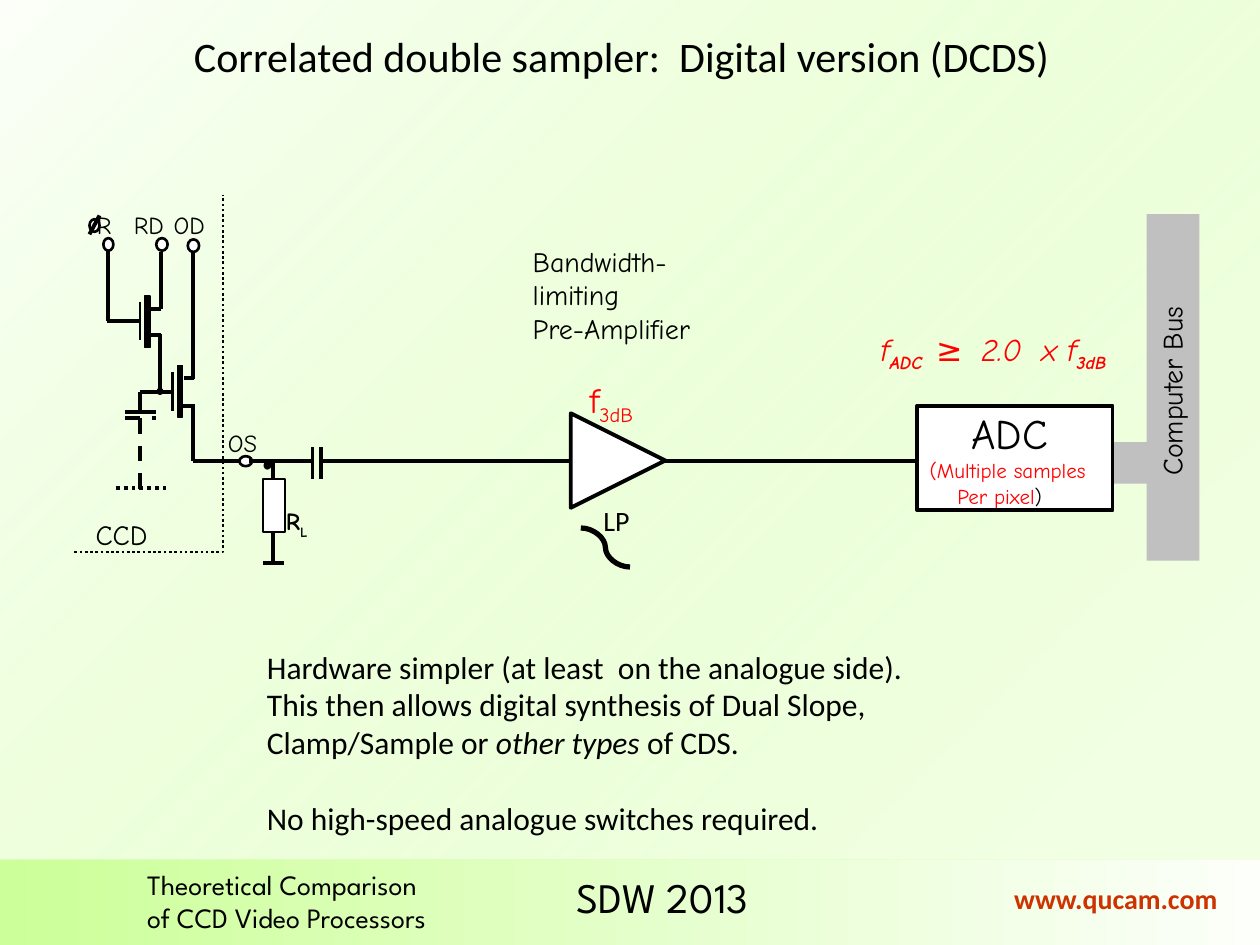
from dataclasses import dataclass

from lxml.etree import SubElement
from pptx import Presentation
from pptx.dml.color import RGBColor
from pptx.enum.dml import MSO_LINE
from pptx.enum.shapes import MSO_CONNECTOR, MSO_SHAPE
from pptx.enum.text import MSO_ANCHOR, MSO_AUTO_SIZE, PP_ALIGN
from pptx.oxml.ns import qn
from pptx.util import Inches, Pt


@dataclass(frozen=True)
class Theme:
    black: str = "000000"
    white: str = "FFFFFF"
    gray: str = "C0C0C0"
    red: str = "FF0000"
    link: str = "CC3300"
    green: str = "CCFF99"
    pale: str = "FCFFFA"
    plain: str = "Calibri"
    comic: str = "Comic Neue"
    footer: str = "League Spartan"
    title: int = 24
    large: int = 20
    body: int = 18
    label: int = 16
    pin: int = 14
    note: int = 12
    junction: int = 60


theme = Theme()


def add_shape(shapes, kind, box, fill=theme.white, weight=0, rotation=0):
    """Add a preset shape; a weight of zero means no outline."""
    shape = shapes.add_shape(kind, *map(Inches, box))
    shape.shadow.inherit = False
    shape.rotation = rotation
    shape.fill.solid()
    shape.fill.fore_color.rgb = RGBColor.from_string(fill)
    if weight:
        shape.line.color.rgb = RGBColor.from_string(theme.black)
        shape.line.width = Pt(weight)
    else:
        shape.line.fill.background()
    return shape


def add_text(shapes, box, paragraphs, shape=None, font=theme.comic, size=theme.label,
             color=theme.black, bold=False, anchor=MSO_ANCHOR.TOP,
             align=PP_ALIGN.LEFT, wrap=False, rotation=0):
    """Write paragraphs of (text, overrides) runs in a new box or a given shape."""
    if shape is None:
        shape = shapes.add_textbox(*map(Inches, box))
        shape.rotation = rotation
        shape.text_frame.auto_size = MSO_AUTO_SIZE.SHAPE_TO_FIT_TEXT
    frame = shape.text_frame
    frame.word_wrap = wrap
    frame.vertical_anchor = anchor
    for index, runs in enumerate(paragraphs):
        paragraph = frame.add_paragraph() if index else frame.paragraphs[0]
        paragraph.alignment = align
        for text, overrides in [(runs, {})] if isinstance(runs, str) else runs:
            run = paragraph.add_run()
            run.text = text
            run.font.name = font
            run.font.size = Pt(overrides.get("size", size))
            run.font.bold = overrides.get("bold", bold)
            run.font.italic = overrides.get("italic", False)
            run.font.color.rgb = RGBColor.from_string(overrides.get("color", color))
            if overrides.get("subscript"):
                run._r.get_or_add_rPr().set("baseline", "-25000")
    return shape


presentation = Presentation()
presentation.slide_width = Inches(10)
presentation.slide_height = Inches(7.5)
slide = presentation.slides.add_slide(presentation.slide_layouts[6])
shapes = slide.shapes

# Footer band and page background, both in green gradients
footer = add_shape(shapes, MSO_SHAPE.RECTANGLE, (0, 6.82, 10, 0.68))
page = add_shape(shapes, MSO_SHAPE.RECTANGLE, (0, 0, 10, 6.82))
for band, first_position in ((footer, 0), (page, 0.12)):
    band.fill.gradient()
    band.fill.gradient_angle = 0
    stops = band.fill.gradient_stops
    for stop, color, position in zip(stops, (theme.green, theme.pale), (first_position, 1)):
        stop.color.rgb = RGBColor.from_string(color)
        stop.position = position

# The page gradient is radial, mirrored and partly transparent
properties = page._element.spPr
properties.find(qn("a:xfrm")).set("flipH", "1")
gradient = properties.find(qn("a:gradFill"))
SubElement(next(gradient.iter(qn("a:srgbClr"))), qn("a:alpha"), val="27000")
gradient.remove(gradient.find(qn("a:lin")))
radial = SubElement(gradient, qn("a:path"))
radial.set("path", "circle")
SubElement(radial, qn("a:fillToRect"), l="100000", t="100000")

# Footer text
add_text(shapes, (4.48, 6.87, 1.78, 0.5), ["SDW 2013"], font=theme.footer, size=theme.title)
add_text(shapes, (1.07, 6.83, 2.9, 0.64), ["Theoretical Comparison", "of CCD Video Processors"],
         font=theme.footer, anchor=MSO_ANCHOR.MIDDLE)
add_text(shapes, (7.95, 6.95, 2.02, 0.37), ["www.qucam.com"], font=theme.plain,
         color=theme.link, bold=True)

# Wires: container, weight, dash, connector kind and end points
ccd = shapes.add_group_shape().shapes
straight = MSO_CONNECTOR.STRAIGHT
wires = [
    # Transistor gates
    (ccd, 1.5, None, straight, [(1.37, 2.95, 1.37, 3.26), (1.11, 2.4, 1.11, 2.7)]),
    # Reset transistor, output transistor and sense node
    (ccd, 2.25, None, straight, [
        (0.86, 1.99, 0.86, 2.55), (1.11, 2.55, 0.85, 2.55),
        (1.28, 2.45, 1.28, 2), (1.28, 2.45, 1.2, 2.45),
        (1.28, 2.66, 1.19, 2.66), (1.27, 2.65, 1.27, 3.11),
        (1.37, 3.11, 1.11, 3.11), (1.11, 3.26, 1.11, 3.11), (0.99, 3.27, 1.24, 3.27),
        (1.53, 3.01, 1.53, 1.99), (1.54, 3, 1.46, 3),
        (1.54, 3.22, 1.45, 3.22), (1.53, 3.21, 1.53, 3.66), (1.53, 3.66, 1.91, 3.66)]),
    # Parasitic capacitor and substrate
    (ccd, 2.25, MSO_LINE.DASH, straight, [(0.99, 3.32, 1.24, 3.32), (1.11, 3.32, 1.11, 3.88)]),
    (ccd, 2.25, MSO_LINE.ROUND_DOT, straight, [(0.92, 3.87, 1.32, 3.87)]),
    # Coupling capacitor, load and signal path
    (shapes, 2.25, None, straight, [
        (1.98, 3.66, 2.48, 3.66), (2.48, 3.55, 2.48, 3.8), (2.55, 3.55, 2.55, 3.8),
        (2.56, 3.66, 3.06, 3.66), (3.04, 3.66, 7.52, 3.66),
        (2.17, 3.66, 2.17, 4.47), (2.09, 4.47, 2.25, 4.47)]),
    # Low-pass symbol
    (shapes, 3, None, MSO_CONNECTOR.CURVE, [(4.61, 4.19, 5, 4.5)]),
]
for container, weight, dash, kind, segments in wires:
    for segment in segments:
        wire = container.add_connector(kind, *map(Inches, segment))
        wire.line.color.rgb = RGBColor.from_string(theme.black)
        wire.line.width = Pt(weight)
        if dash:
            wire.line.dash_style = dash
        SubElement(wire._element.spPr, qn("a:effectLst"))

# CCD transistor channels, node, terminals and the phase symbol
for left, top in ((1.41, 2.9), (1.15, 2.35)):
    add_shape(ccd, MSO_SHAPE.RECTANGLE, (left, top, 0.04, 0.41), theme.black, 0.75)
add_shape(ccd, MSO_SHAPE.OVAL, (1.25, 3.08, 0.04, 0.05), theme.black, 0.75)
for left, top, width, rotation in ((1.49, 1.9, 0.09, 0), (1.24, 1.89, 0.09, 0),
                                   (0.82, 1.89, 0.08, 0), (0.71, 1.74, 0.08, 0),
                                   (1.91, 3.61, 0.08, 90)):
    add_shape(ccd, MSO_SHAPE.OVAL, (left, top, width, 0.1), weight=1.5, rotation=rotation)
slash = ccd.add_connector(straight, *map(Inches, (0.79, 1.71, 0.71, 1.86)))
slash.line.color.rgb = RGBColor.from_string(theme.black)
slash.line.width = Pt(2.25)
SubElement(slash._element.spPr, qn("a:effectLst"))

# CCD pin names
for name, left, top, width, align in (("OD", 1.28, 1.62, 0.5, PP_ALIGN.LEFT),
                                      ("OS", 1.71, 3.35, 0.49, PP_ALIGN.LEFT),
                                      ("RD", 0.94, 1.62, 0.46, PP_ALIGN.RIGHT),
                                      ("R", 0.67, 1.62, 0.32, PP_ALIGN.LEFT)):
    add_text(ccd, (left, top, width, 0.33), [name], size=theme.pin,
             anchor=MSO_ANCHOR.MIDDLE, align=align)

# Dotted CCD boundary
builder = shapes.build_freeform(Inches(0.59), Inches(4.38))
builder.add_line_segments([(Inches(1.77), Inches(4.38)), (Inches(1.77), Inches(1.55))], close=False)
boundary = builder.convert_to_shape()
boundary.shadow.inherit = False
boundary.fill.background()
boundary.line.color.rgb = RGBColor.from_string(theme.black)
boundary.line.width = Pt(1.5)
boundary.line.dash_style = MSO_LINE.ROUND_DOT
add_text(shapes, (0.66, 4.06, 0.62, 0.37), ["CCD"])

# Load resistor, computer bus and amplifier
add_text(shapes, (1.97, 2.84, 0.41, 1.1), ["."], size=theme.junction)
add_shape(shapes, MSO_SHAPE.RECTANGLE, (2.09, 3.8, 0.17, 0.42), weight=1)
for box in ((9.1, 1.7, 0.42, 2.75), (8.78, 3.51, 0.33, 0.33)):
    add_shape(shapes, MSO_SHAPE.RECTANGLE, box, theme.gray)
add_shape(shapes, MSO_SHAPE.ISOSCELES_TRIANGLE, (4.53, 3.28, 0.75, 0.75), weight=2.25, rotation=90)
subscript = {"subscript": True}
red = {"size": theme.large, "color": theme.red}
amplifier = add_text(shapes, (4.13, 1.89, 1.63, 1.78),
                     ["Bandwidth-", "limiting", "Pre-Amplifier", [("f", red), ("3dB", red | subscript)]])
cutoff = amplifier.text_frame.paragraphs[-1]
cutoff.alignment = PP_ALIGN.CENTER
cutoff.space_before = Pt(19)
add_text(shapes, (8.49, 2.88, 1.62, 0.37), ["Computer Bus"], rotation=270)
add_text(shapes, (4.69, 3.95, 0.41, 0.37), ["LP"], font=theme.plain)
add_text(shapes, (2.17, 3.97, 0.4, 0.34), [[("R", {}), ("L", subscript)]], size=theme.pin, bold=True)

# Converter
converter = add_shape(shapes, MSO_SHAPE.RECTANGLE, (7.28, 3.22, 1.55, 0.83), weight=2.25)
add_text(shapes, None, [[("ADC", {"size": theme.title, "color": theme.black})], "(Multiple samples",
                        [("Per pixel", {}), (")", {"color": theme.black})]],
         shape=converter, size=theme.note, color=theme.red, anchor=MSO_ANCHOR.MIDDLE, wrap=True)
for paragraph, indent in zip(converter.text_frame.paragraphs, (0.33, 0, 0.22)):
    paragraph._p.get_or_add_pPr().set("marL", str(Inches(indent)))

# Sampling rule, spaced with tab stops
italic = {"italic": True}
small = italic | subscript | {"bold": True}
rule = add_text(shapes, (6.89, 2.57, 2.42, 0.64),
                [[("f", italic), ("ADC", small), ("\t≥\t2.0\tx f", italic), ("3dB", small)]],
                size=theme.body, color=theme.red, wrap=True)
tabs = SubElement(rule.text_frame.paragraphs[0]._p.get_or_add_pPr(), qn("a:tabLst"))
for position in (0.44, 0.8, 1.28):
    SubElement(tabs, qn("a:tab"), pos=str(Inches(position)), algn="l")

# Title and conclusions
add_text(shapes, (1.44, 0.19, 7.05, 0.5), ["Correlated double sampler:  Digital version (DCDS)"],
         font=theme.plain, size=theme.title)
conclusions = add_text(shapes, (2.02, 5.09, 5.31, 1.62), [
    "Hardware simpler (at least  on the analogue side).",
    "This then allows digital synthesis of Dual Slope,",
    [("Clamp/Sample or ", {}), ("other types ", italic), ("of CDS.", {})],
    "No high-speed analogue switches required."], font=theme.plain, size=theme.body)
conclusions.text_frame.paragraphs[-1].space_before = Pt(22)

presentation.save("out.pptx")
